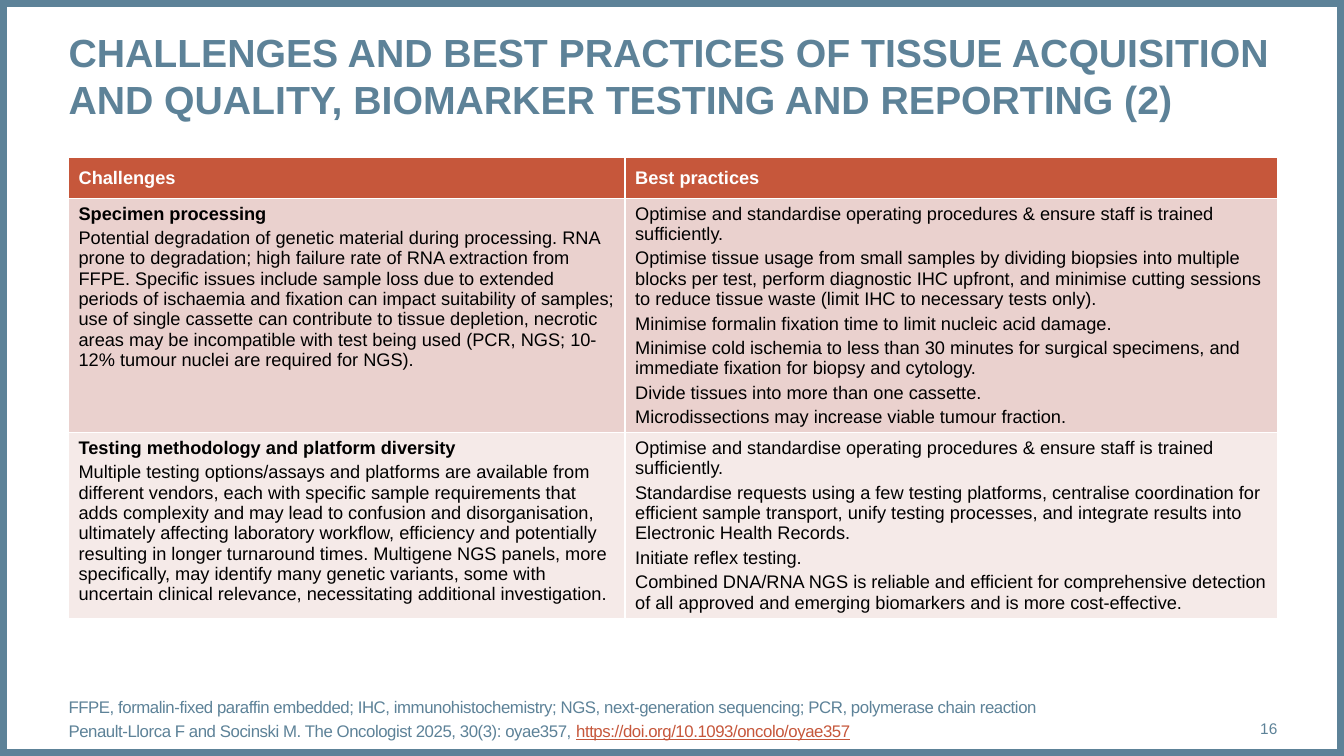
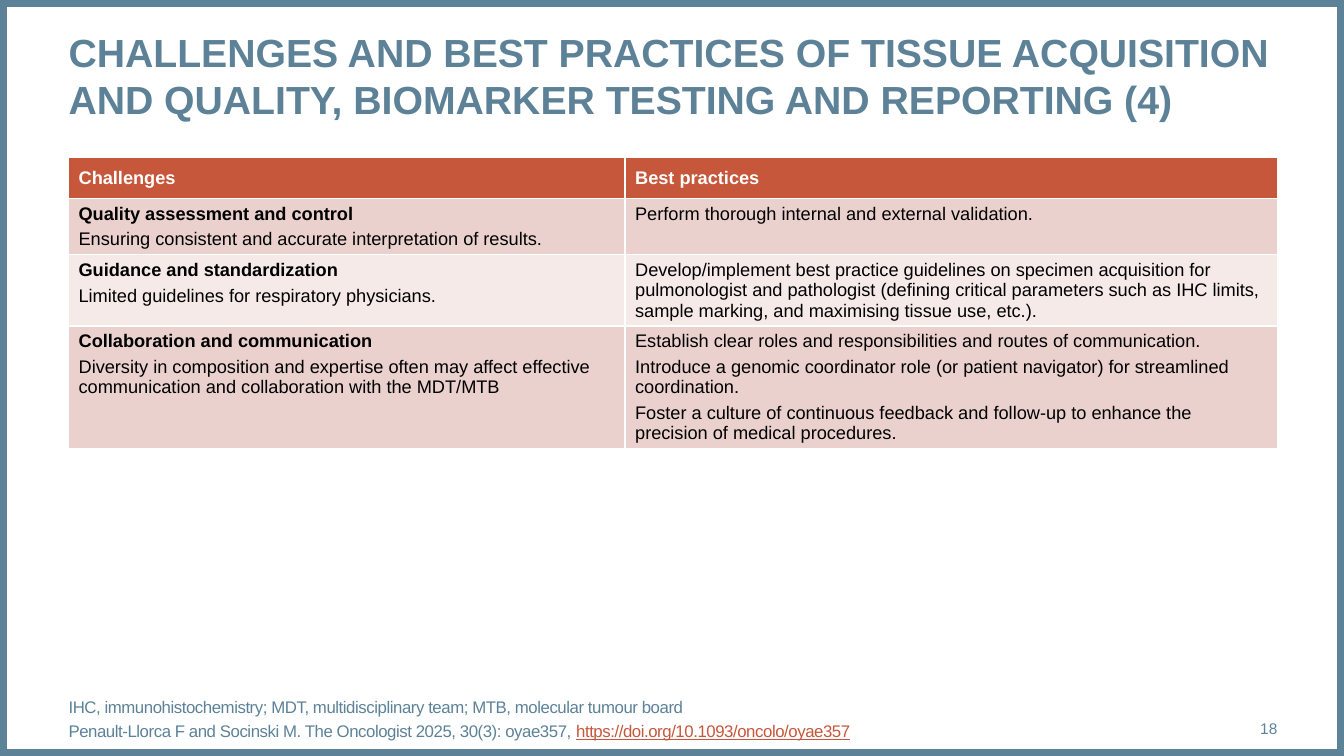
from dataclasses import dataclass

from pptx import Presentation
from pptx.dml.color import RGBColor
from pptx.enum.shapes import MSO_SHAPE
from pptx.enum.text import MSO_ANCHOR, MSO_AUTO_SIZE, PP_ALIGN
from pptx.oxml.ns import qn
from pptx.slide import Slide
from pptx.table import _Cell
from pptx.text.text import TextFrame, _Paragraph, _Run
from pptx.util import Emu, Pt

RECTANGLE = MSO_SHAPE.RECTANGLE
TOP, MIDDLE, BOTTOM = MSO_ANCHOR.TOP, MSO_ANCHOR.MIDDLE, MSO_ANCHOR.BOTTOM
LEFT, RIGHT = PP_ALIGN.LEFT, PP_ALIGN.RIGHT
NO_AUTOFIT = MSO_AUTO_SIZE.NONE

# Shared look, with 100 px to the inch
EMU_PER_PX = 9144
SLIDE_WIDTH, SLIDE_HEIGHT = 1333, 750
FONT = "Arial"
COLOURS = {
    "slate": "5D8298",
    "rust": "C6573B",
    "white": "FFFFFF",
    "black": "000000",
    "band dark": "EAD1CE",
    "band light": "F5EAE8",
}
TITLE_BOX = (68, 28, 1199, 94)
FOOTER_BOX = (68, 695, 1113, 40)
NUMBER_BOX = (1181, 703, 86, 40)
TABLE_LEFT, TABLE_TOP = 68, 156
COLUMN_WIDTHS = (552, 647)
ROW_HEIGHT = 41
HEADERS = ("Challenges", "Best practices")
TITLE = (
    "CHALLENGES AND BEST PRACTICES OF TISSUE ACQUISITION "
    "AND QUALITY, BIOMARKER TESTING AND REPORTING"
)
CITATION = "Penault-Llorca F and Socinski M. The Oncologist 2025, 30(3): oyae357, "
CITATION_ADDRESS = "https://doi.org/10.1093/oncolo/oyae357"


@dataclass(frozen=True)
class Topic:
    heading: str
    challenge: str
    practices: tuple[str, ...]


@dataclass(frozen=True)
class TopicSlide:
    sequence: int
    page: int
    abbreviations: str
    paragraph_gap: int
    topics: tuple[Topic, ...]


STAFF_TRAINING = (
    "Optimise and standardise operating procedures & ensure staff is trained sufficiently."
)

TOPIC_SLIDES = (
    TopicSlide(
        sequence=2,
        page=16,
        abbreviations=(
            "FFPE, formalin-fixed paraffin embedded; IHC, immunohistochemistry; "
            "NGS, next-generation sequencing; PCR, polymerase chain reaction"
        ),
        paragraph_gap=3,
        topics=(
            Topic(
                "Specimen processing",
                "Potential degradation of genetic material during processing. RNA prone to "
                "degradation; high failure rate of RNA extraction from FFPE. Specific issues "
                "include sample loss due to extended periods of ischaemia and fixation can "
                "impact suitability of samples; use of single cassette can contribute to "
                "tissue depletion, necrotic areas may be incompatible with test being used "
                "(PCR, NGS; 10-12% tumour nuclei are required for NGS).",
                (
                    STAFF_TRAINING,
                    "Optimise tissue usage from small samples by dividing biopsies into "
                    "multiple blocks per test, perform diagnostic IHC upfront, and minimise "
                    "cutting sessions to reduce tissue waste (limit IHC to necessary tests "
                    "only).",
                    "Minimise formalin fixation time to limit nucleic acid damage.",
                    "Minimise cold ischemia to less than 30 minutes for surgical specimens, "
                    "and immediate fixation for biopsy and cytology.",
                    "Divide tissues into more than one cassette.",
                    "Microdissections may increase viable tumour fraction.",
                ),
            ),
            Topic(
                "Testing methodology and platform diversity",
                "Multiple testing options/assays and platforms are available from different "
                "vendors, each with specific sample requirements that adds complexity and may "
                "lead to confusion and disorganisation, ultimately affecting laboratory "
                "workflow, efficiency and potentially resulting in longer turnaround times. "
                "Multigene NGS panels, more specifically, may identify many genetic variants, "
                "some with uncertain clinical relevance, necessitating additional "
                "investigation.",
                (
                    STAFF_TRAINING,
                    "Standardise requests using a few testing platforms, centralise "
                    "coordination for efficient sample transport, unify testing processes, "
                    "and integrate results into Electronic Health Records.",
                    "Initiate reflex testing.",
                    "Combined DNA/RNA NGS is reliable and efficient for comprehensive "
                    "detection of all approved and emerging biomarkers and is more "
                    "cost-effective.",
                ),
            ),
        ),
    ),
    TopicSlide(
        sequence=4,
        page=18,
        abbreviations=(
            "IHC, immunohistochemistry; MDT, multidisciplinary team; "
            "MTB, molecular tumour board"
        ),
        paragraph_gap=4,
        topics=(
            Topic(
                "Quality assessment and control",
                "Ensuring consistent and accurate interpretation of results.",
                ("Perform thorough internal and external validation.",),
            ),
            Topic(
                "Guidance and standardization",
                "Limited guidelines for respiratory physicians.",
                (
                    "Develop/implement best practice guidelines on specimen acquisition for "
                    "pulmonologist and pathologist (defining critical parameters such as IHC "
                    "limits, sample marking, and maximising tissue use, etc.).",
                ),
            ),
            Topic(
                "Collaboration and communication",
                "Diversity in composition and expertise often may affect effective "
                "communication and collaboration with the MDT/MTB",
                (
                    "Establish clear roles and responsibilities and routes of communication.",
                    "Introduce a genomic coordinator role (or patient navigator) for "
                    "streamlined coordination.",
                    "Foster a culture of continuous feedback and follow-up to enhance the "
                    "precision of medical procedures.",
                ),
            ),
        ),
    ),
)


def px(length: int) -> Emu:
    return Emu(length * EMU_PER_PX)


def colour(name: str) -> RGBColor:
    return RGBColor.from_string(COLOURS[name])


def format_run(run: _Run, size: int, colour_name: str, bold: bool = False) -> None:
    run.font.name = FONT
    run.font.size = Pt(size)
    run.font.bold = bold
    run.font.color.rgb = colour(colour_name)


def place(shape, box: tuple[int, int, int, int]) -> None:
    shape.left, shape.top, shape.width, shape.height = map(px, box)


def set_frame(text_frame: TextFrame, anchor: MSO_ANCHOR) -> None:
    text_frame.margin_left = text_frame.margin_right = 0
    text_frame.margin_top = text_frame.margin_bottom = 0
    text_frame.word_wrap = True
    text_frame.auto_size = NO_AUTOFIT
    text_frame.vertical_anchor = anchor


def remove_bullet(paragraph: _Paragraph) -> None:
    properties = paragraph._p.get_or_add_pPr()
    properties.set("marL", "0")
    properties.set("indent", "0")
    properties.append(properties.makeelement(qn("a:buNone"), {}))


def add_border(slide: Slide) -> None:
    border = slide.shapes.add_shape(RECTANGLE, 0, 0, px(SLIDE_WIDTH), px(SLIDE_HEIGHT))
    border.shadow.inherit = False
    border.fill.background()
    border.line.color.rgb = colour("slate")
    border.line.width = Pt(10)


def fill_title(slide: Slide, sequence: int) -> None:
    title = slide.shapes.title
    place(title, TITLE_BOX)
    set_frame(title.text_frame, TOP)
    title.text_frame.text = f"{TITLE} ({sequence})"
    paragraph = title.text_frame.paragraphs[0]
    paragraph.alignment = LEFT
    format_run(paragraph.runs[0], 28, "slate", bold=True)


def fill_footer(slide: Slide, abbreviations: str) -> None:
    footer = slide.placeholders[1]
    place(footer, FOOTER_BOX)
    set_frame(footer.text_frame, BOTTOM)
    footer.text_frame.text = f"{abbreviations}\n{CITATION}"
    first, citation = footer.text_frame.paragraphs
    address = citation.add_run()
    address.text = CITATION_ADDRESS
    for index, paragraph in enumerate((first, citation)):
        remove_bullet(paragraph)
        paragraph.space_before = Pt(3 * index)
        for run in paragraph.runs:
            format_run(run, 12, "slate")
            run._r.get_or_add_rPr().set("spc", "-30")
    address.font.color.rgb = colour("rust")
    address.font.underline = True


def add_page_number(slide: Slide, page: int) -> None:
    number = slide.shapes.add_textbox(*map(px, NUMBER_BOX))
    set_frame(number.text_frame, MIDDLE)
    number.text_frame.text = str(page)
    paragraph = number.text_frame.paragraphs[0]
    paragraph.alignment = RIGHT
    format_run(paragraph.runs[0], 11, "slate")


def fill_cell(cell: _Cell, lines: tuple[str, ...], fill: str, text_colour: str,
              gap: int = 0, bold_first: bool = False) -> None:
    cell.fill.solid()
    cell.fill.fore_color.rgb = colour(fill)
    cell.text_frame.text = "\n".join(lines)
    for index, paragraph in enumerate(cell.text_frame.paragraphs):
        paragraph.space_after = Pt(gap)
        format_run(paragraph.runs[0], 13, text_colour, bold_first and index == 0)


def add_topic_table(slide: Slide, topics: tuple[Topic, ...], gap: int) -> None:
    row_count = len(topics) + 1
    table = slide.shapes.add_table(
        row_count, len(COLUMN_WIDTHS), px(TABLE_LEFT), px(TABLE_TOP),
        px(sum(COLUMN_WIDTHS)), px(ROW_HEIGHT * row_count),
    ).table
    for column, (width, header) in enumerate(zip(COLUMN_WIDTHS, HEADERS)):
        table.columns[column].width = px(width)
        cell = table.cell(0, column)
        fill_cell(cell, (header,), "rust", "white", bold_first=True)
        cell.vertical_anchor = MIDDLE
    for row, topic in enumerate(topics, start=1):
        band = "band dark" if row % 2 else "band light"
        challenge = (topic.heading, topic.challenge)
        fill_cell(table.cell(row, 0), challenge, band, "black", gap, bold_first=True)
        fill_cell(table.cell(row, 1), topic.practices, band, "black", gap)


def main() -> None:
    presentation = Presentation()
    presentation.slide_width, presentation.slide_height = px(SLIDE_WIDTH), px(SLIDE_HEIGHT)
    title_and_content = presentation.slide_layouts[1]
    for content in TOPIC_SLIDES:
        slide = presentation.slides.add_slide(title_and_content)
        add_border(slide)
        fill_title(slide, content.sequence)
        fill_footer(slide, content.abbreviations)
        add_page_number(slide, content.page)
        add_topic_table(slide, content.topics, content.paragraph_gap)
    presentation.save("out.pptx")


if __name__ == "__main__":
    main()
